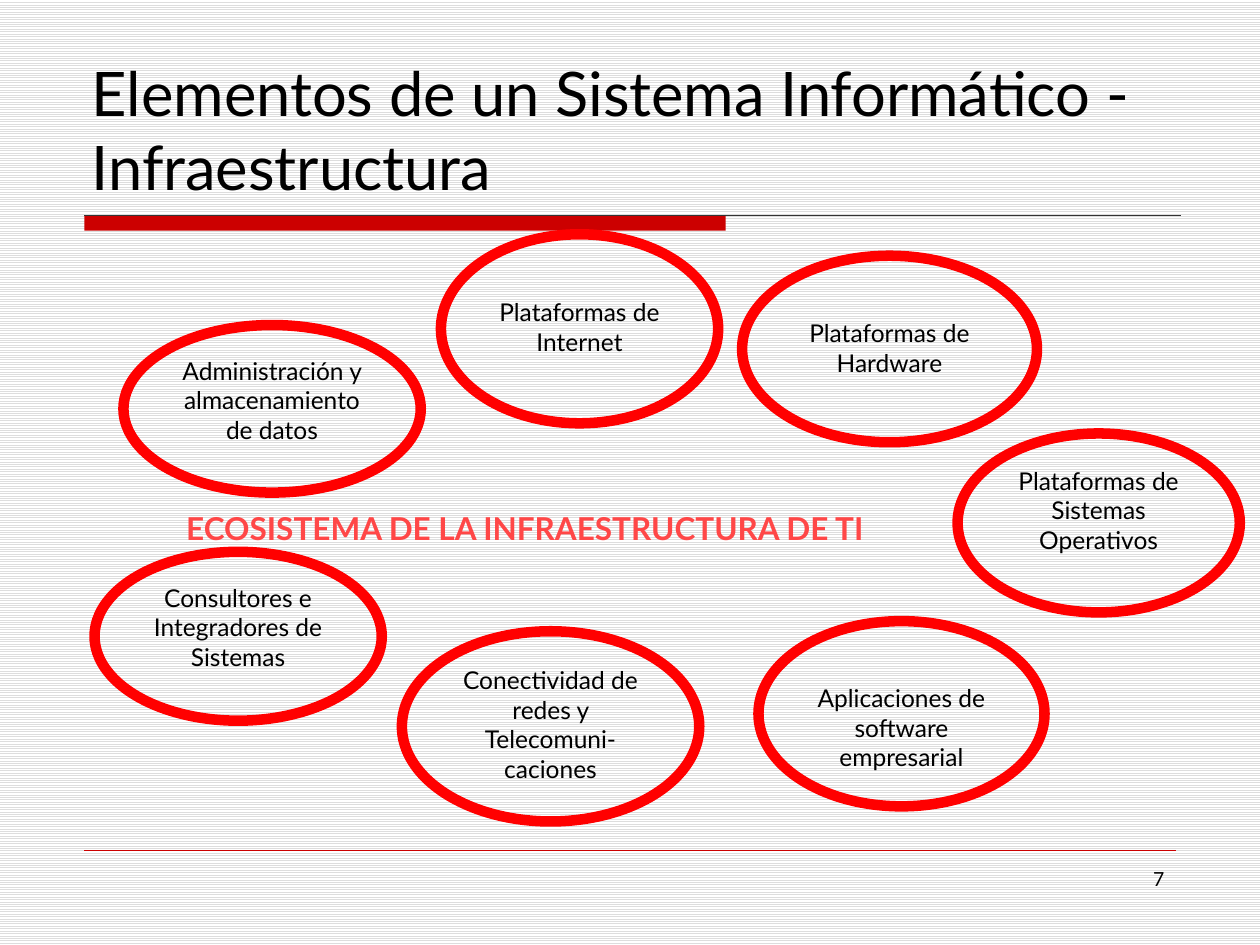
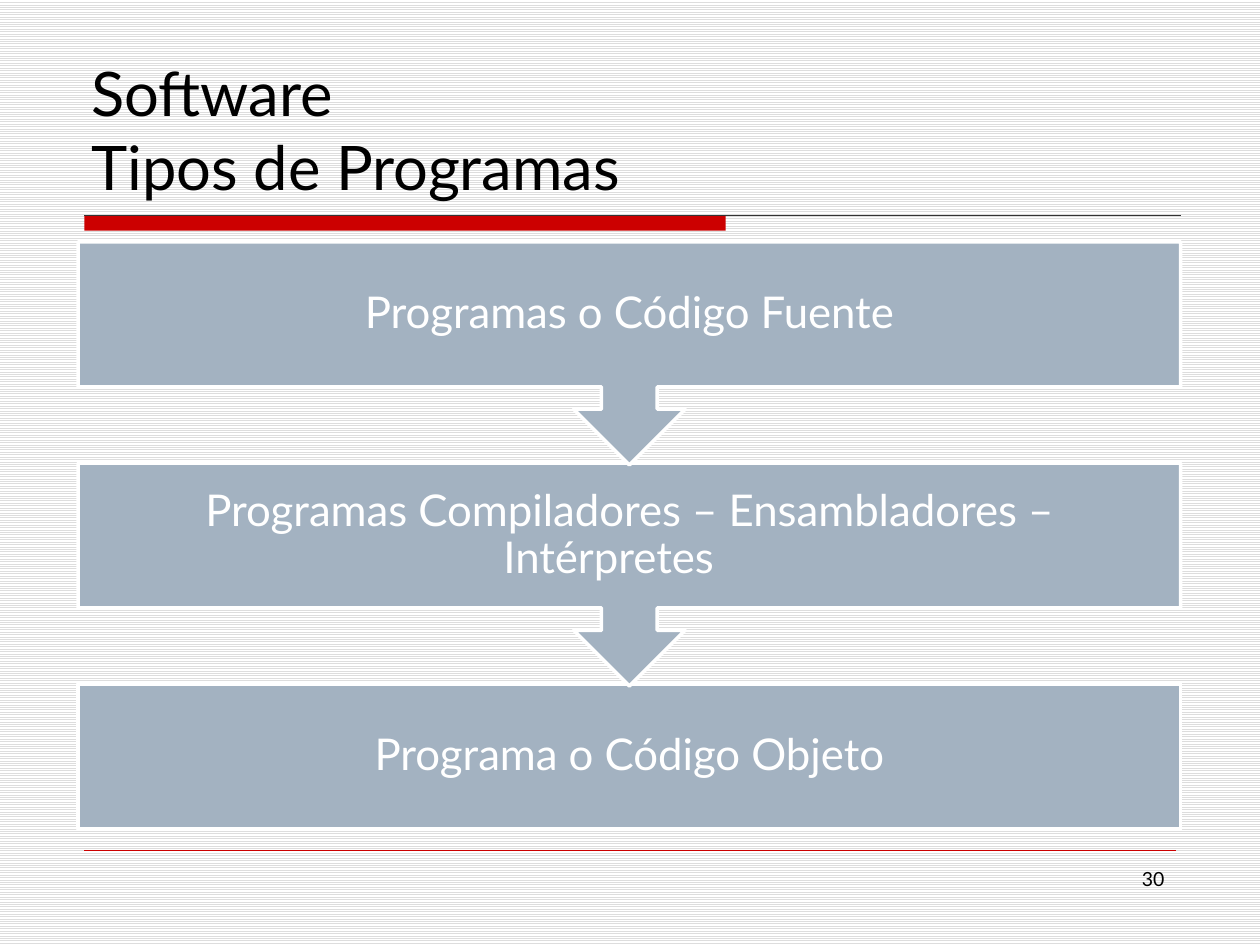
from lxml.etree import SubElement
from pptx import Presentation
from pptx.dml.color import RGBColor
from pptx.enum.dml import MSO_PATTERN
from pptx.enum.shapes import MSO_CONNECTOR, MSO_SHAPE
from pptx.enum.text import MSO_ANCHOR, PP_ALIGN
from pptx.oxml.ns import qn
from pptx.util import Inches, Pt

FONT = "Lato"
BLACK, WHITE, DARK = "000000", "FFFFFF", "333333"
BAND_RED, RING_RED, CAPTION_RED = "CC0000", "FF0000", "FF4747"
STEP_BLUE, STRIPE_GREY = "A3B2C1", "DDDDDD"

# Format values for each kind of text
TITLE = {"size": 35.1, "color": BLACK}
NUMBER = {"size": 11.1, "color": BLACK, "align": PP_ALIGN.RIGHT}
RING = {"size": 14, "color": BLACK, "align": PP_ALIGN.CENTER}
CAPTION = {"size": 18, "color": CAPTION_RED, "bold": True}
STEP = {"size": 25, "color": WHITE, "align": PP_ALIGN.CENTER, "spacing": 0.9}

# Left, top, width, height and whether the text starts one line lower
ECOSYSTEM = [
    ("Administración y almacenamiento de datos", (0.98, 2.58, 2.36, 1.33), False),
    ("Plataformas de Sistemas Operativos", (7.6, 3.44, 2.24, 1.42), False),
    ("Aplicaciones de software empresarial", (6.02, 4.93, 2.27, 1.47), True),
    ("Plataformas de Hardware", (5.89, 2.03, 2.34, 1.48), True),
    ("Conectividad de redes y Telecomuni-caciones", (3.19, 5.01, 2.36, 1.51), False),
    ("Consultores e Integradores de Sistemas", (0.75, 4.38, 2.28, 1.34), False),
    ("Plataformas de Internet", (3.5, 1.86, 2.2, 1.5), True),
]
PROGRAM_STEPS = [
    "Programas o Código Fuente",
    "Programas Compiladores – Ensambladores – Intérpretes\t",
    "Programa o Código Objeto",
]


def rgb(hex_color):
    return RGBColor.from_string(hex_color)


def inches(box):
    return [Inches(length) for length in box]


def write(shape, text, style, **frame_format):
    frame = shape.text_frame
    settings = {"word_wrap": True, "vertical_anchor": MSO_ANCHOR.TOP, **frame_format}
    for name, value in settings.items():
        setattr(frame, name, value)
    paragraph = frame.paragraphs[0]
    paragraph.text = text
    paragraph.alignment = style.get("align", PP_ALIGN.LEFT)
    paragraph.line_spacing = style.get("spacing")
    font_format = {"name": FONT, "size": Pt(style["size"]), "bold": style.get("bold", False)}
    for run in paragraph.runs:
        for name, value in font_format.items():
            setattr(run.font, name, value)
        run.font.color.rgb = rgb(style["color"])


def add_text(slide, box, text, style, **frame_format):
    write(slide.shapes.add_textbox(*inches(box)), text, style, **frame_format)


def add_form(slide, kind, box, fill=None, line=None, line_width=0):
    form = slide.shapes.add_shape(kind, *inches(box))
    form.shadow.inherit = False
    if fill:
        form.fill.solid()
        form.fill.fore_color.rgb = rgb(fill)
    else:
        form.fill.background()
    if line:
        form.line.color.rgb = rgb(line)
        form.line.width = Pt(line_width)
    else:
        form.line.fill.background()
    return form


def add_rule(slide, left, right, y, color, width):
    rule = slide.shapes.add_connector(MSO_CONNECTOR.STRAIGHT, *inches((left, y, right, y)))
    rule.line.color.rgb = rgb(color)
    rule.line.width = Pt(width)
    SubElement(rule._element.spPr, qn("a:effectLst"))


def add_base_slide(prs, title, number):
    slide = prs.slides.add_slide(prs.slide_layouts[6])
    # Striped background
    stripes = slide.background.fill
    stripes.patterned()
    stripes.pattern = MSO_PATTERN.LIGHT_HORIZONTAL
    stripes.fore_color.rgb = rgb(STRIPE_GREY)
    stripes.back_color.rgb = rgb(WHITE)
    # Title band and footer
    add_form(slide, MSO_SHAPE.RECTANGLE, (0.67, 1.71, 5.09, 0.12), BAND_RED)
    add_rule(slide, 0.67, 9.37, 1.71, DARK, 0.75)
    add_rule(slide, 0.67, 9.33, 6.75, BAND_RED, 0.25)
    add_text(slide, (0.63, 0.33, 8.75, 1.33), title, TITLE, vertical_anchor=MSO_ANCHOR.BOTTOM)
    add_text(slide, (7.17, 6.83, 2.17, 0.52), number, NUMBER)
    return slide


def add_ecosystem(slide, caption_box):
    for text, box, starts_lower in ECOSYSTEM:
        ring = add_form(slide, MSO_SHAPE.OVAL, box, line=RING_RED, line_width=6)
        write(ring, text, RING, margin_top=Inches(0.28 if starts_lower else 0.05))
    add_text(slide, caption_box, "ECOSISTEMA DE LA INFRAESTRUCTURA DE TI", CAPTION)


def add_program_flow(slide, box, steps):
    left, top, width, height = box
    block_height, callout_height = 1.15, 1.77
    pitch = (height - block_height) / (len(steps) - 1)
    margins = {f"margin_{side}": Inches(0.19) for side in ("left", "top", "right", "bottom")}
    # From the bottom up, so that each arrow tip lies over the next block
    for index, text in reversed(list(enumerate(steps))):
        is_last = index == len(steps) - 1
        kind = MSO_SHAPE.RECTANGLE if is_last else MSO_SHAPE.DOWN_ARROW_CALLOUT
        step_box = (left, top + index * pitch, width, block_height if is_last else callout_height)
        step = add_form(slide, kind, step_box, STEP_BLUE, WHITE, 2)
        write(step, text, STEP, vertical_anchor=MSO_ANCHOR.MIDDLE, **margins)


def main():
    prs = Presentation()
    prs.slide_width, prs.slide_height = Inches(10), Inches(7.5)

    infrastructure = add_base_slide(
        prs, "Elementos de un Sistema Informático - Infraestructura", "7")
    add_ecosystem(infrastructure, (1.38, 3.99, 6.06, 0.4))

    programs = add_base_slide(prs, "Software\nTipos de Programas", "30")
    add_program_flow(programs, (0.62, 1.92, 8.75, 4.66), PROGRAM_STEPS)

    prs.save("out.pptx")


if __name__ == "__main__":
    main()
